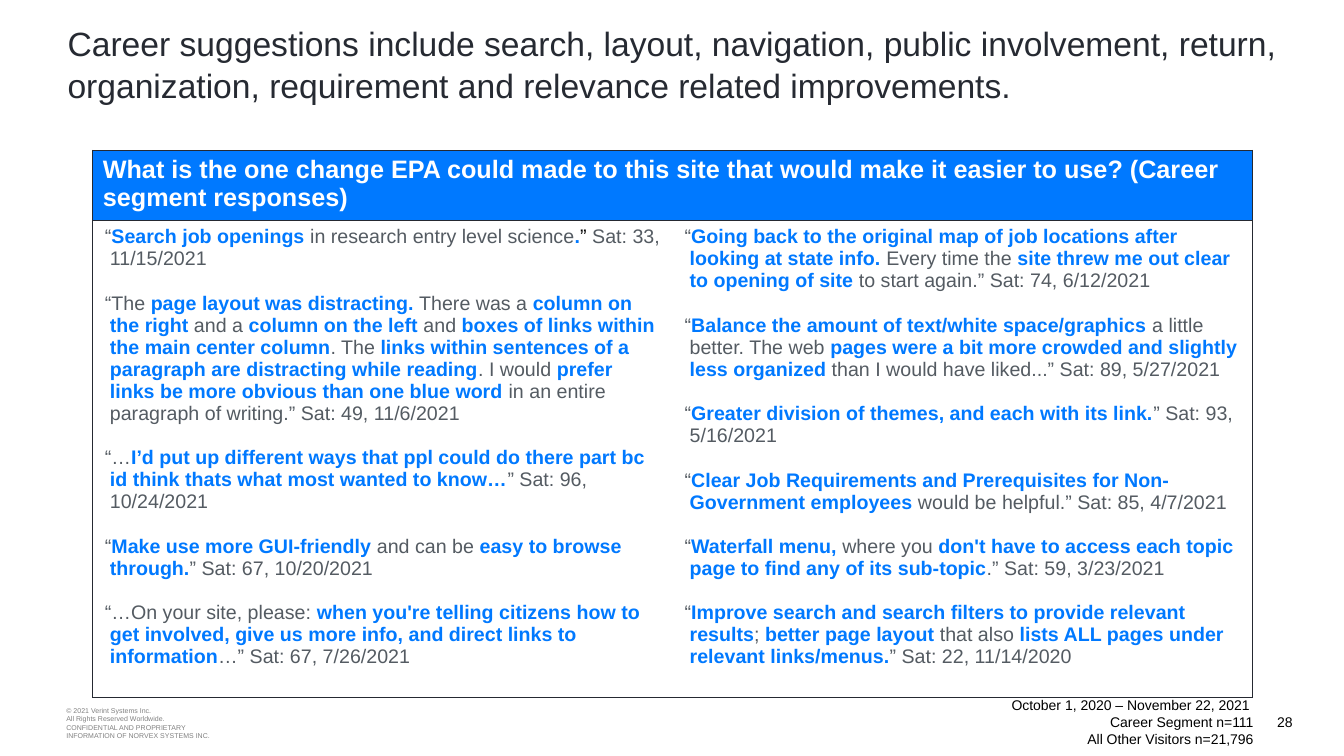
from dataclasses import dataclass

from lxml import etree
from pptx import Presentation
from pptx.dml.color import RGBColor
from pptx.enum.text import MSO_ANCHOR, PP_ALIGN
from pptx.oxml.ns import qn
from pptx.util import Inches, Pt

LEFT, RIGHT = PP_ALIGN.LEFT, PP_ALIGN.RIGHT
TOP, MIDDLE = MSO_ANCHOR.TOP, MSO_ANCHOR.MIDDLE
FONT = "Arial"
BLUE, GREY, INK, BLACK, WHITE = "0079FF", "545B62", "252931", "000000", "FFFFFF"

TITLE = ("Career suggestions include search, layout, navigation, public involvement, return, "
         "organization, requirement and relevance related improvements.")
QUESTION = ("What is the one change EPA could made to this site that would make it easier to use? "
            "(Career segment responses)")

# Runs are parted by "|"; a leading "*" makes a run bold blue, "^" makes it black
MARKS = {"*": (BLUE, True), "^": (BLACK, False)}
QUOTES = [
    [
        "“|*Search job openings| in research entry level science|*.|^” |Sat: 33, 11/15/2021",
        "“The |*page layout was distracting.| There was a |*column on the right| and a "
        "|*column on the left |and |*boxes of links within the main center column|. The "
        "|*links within sentences of a paragraph are distracting while reading|. I would "
        "|*prefer links be more obvious than one blue word"
        "| in an entire paragraph of writing.” Sat: 49, 11/6/2021",
        "“…|*I’d put up different ways that ppl could do there part bc id think thats what "
        "most wanted to know…|” Sat: 96, 10/24/2021",
        "“|*Make use more GUI-friendly| and can be |*easy to browse through."
        "|” Sat: 67, 10/20/2021",
        "“…On your site, please: |*when you're telling citizens how to get involved, give us "
        "more info, and direct links to information|…” Sat: 67, 7/26/2021",
    ],
    [
        "“|*Going back to the original map of job locations after looking at state info."
        "| Every time the |*site threw me out clear to opening of site"
        "| to start again.” Sat: 74, 6/12/2021",
        "“|*Balance the amount of text/white space/graphics| a little better. The web "
        "|*pages were a bit more crowded and slightly less organized"
        "| than I would have liked...” Sat: 89, 5/27/2021",
        "“|*Greater division of themes, and each with its link.|” Sat: 93, 5/16/2021",
        "“|*Clear Job Requirements and Prerequisites for Non-Government employees"
        "| would be helpful.” Sat: 85, 4/7/2021",
        "“|*Waterfall menu, |where you |*don't have to access each topic page to find any "
        "of its sub-topic|.” Sat: 59, 3/23/2021",
        "“|*Improve search and search filters to provide relevant results|; "
        "|*better page layout| that also |*lists ALL pages under relevant links/menus."
        "|” Sat: 22, 11/14/2020",
    ],
]


@dataclass
class Note:
    left: float
    top: float
    width: float
    lines: list[str]
    size: float
    color: str
    align: PP_ALIGN


NOTES = [
    Note(0.56, 6.94, 2.4, ["© 2021 Verint Systems Inc.", "All Rights Reserved Worldwide.",
                           "CONFIDENTIAL AND PROPRIETARY",
                           "INFORMATION OF NORVEX SYSTEMS INC."], 5, "808080", LEFT),
    Note(11.81, 6.93, 1.11, ["28"], 10, BLACK, RIGHT),
    Note(6.53, 6.93, 6, ["October 1, 2020 – November 22, 2021 ", "Career Segment n=111",
                         "All Other Visitors n=21,796"], 10, BLACK, RIGHT),
]


def rgb(color: str) -> RGBColor:
    return RGBColor.from_string(color)


def add_run(p, text: str, size: float, color: str, bold: bool = False) -> None:
    r = p.add_run()
    r.text = text
    r.font.name, r.font.size, r.font.bold = FONT, Pt(size), bold
    r.font.color.rgb = rgb(color)


def next_paragraph(tf, index: int):
    return tf.add_paragraph() if index else tf.paragraphs[0]


def add_note(slide, note: Note) -> None:
    box = slide.shapes.add_textbox(Inches(note.left), Inches(note.top),
                                   Inches(note.width), Inches(0.47))
    tf = box.text_frame
    tf.word_wrap, tf.vertical_anchor = True, MIDDLE
    for i, line in enumerate(note.lines):
        p = next_paragraph(tf, i)
        p.alignment = note.align
        add_run(p, line, note.size, note.color)


def set_borders(cell, sides: str) -> None:
    """Line the given sides of a cell, and clear the others."""
    tc_pr = cell._tc.get_or_add_tcPr()
    for side in "LRTB":
        ln = etree.SubElement(tc_pr, qn(f"a:ln{side}"), w=str(Pt(0.75)))
        if side in sides:
            fill = etree.SubElement(ln, qn("a:solidFill"))
            etree.SubElement(fill, qn("a:srgbClr"), val=INK)
        else:
            etree.SubElement(ln, qn("a:noFill"))


def add_quotes(cell, quotes: list[str]) -> None:
    for i, quote in enumerate(quotes):
        p = next_paragraph(cell.text_frame, i)
        p_pr = p._p.get_or_add_pPr()
        p_pr.set("marL", str(Inches(0.07)))
        p_pr.set("indent", str(Inches(-0.05)))
        if i:
            p.space_before = Pt(16)
        for part in quote.split("|"):
            color, bold = MARKS.get(part[0], (GREY, False))
            add_run(p, part.lstrip("*^"), 14, color, bold)


def add_quote_table(slide) -> None:
    frame = slide.shapes.add_table(2, 2, Inches(0.92), Inches(1.49), Inches(11.5), Inches(5.39))
    table = frame.table
    table.first_row = table.horz_banding = False
    for row, height in zip(table.rows, (0.69, 4.7)):
        row.height = Inches(height)

    # Question across both columns
    header = table.cell(0, 0)
    header.merge(table.cell(0, 1))
    for cell in table.rows[0].cells:
        set_borders(cell, "LRTB")
        cell.fill.solid()
        cell.fill.fore_color.rgb = rgb(BLUE)
    add_run(header.text_frame.paragraphs[0], QUESTION, 18, WHITE, True)

    # Visitor answers
    for cell, sides, quotes in zip(table.rows[1].cells, ("LTB", "RTB"), QUOTES):
        set_borders(cell, sides)
        cell.fill.background()
        add_quotes(cell, quotes)


def main() -> None:
    prs = Presentation()
    prs.slide_width, prs.slide_height = Inches(13.33), Inches(7.5)
    slide = prs.slides.add_slide(prs.slide_layouts[5])

    # Title
    title = slide.shapes.title
    title.left, title.top = Inches(0.57), Inches(0.16)
    title.width, title.height = Inches(12.2), Inches(0.77)
    tf = title.text_frame
    tf.word_wrap, tf.vertical_anchor = True, TOP
    p = tf.paragraphs[0]
    p.alignment, p.line_spacing = LEFT, 1.04
    add_run(p, TITLE, 24, "262A32")

    # Footer notes and table
    for note in NOTES:
        add_note(slide, note)
    add_quote_table(slide)
    prs.save("out.pptx")


if __name__ == "__main__":
    main()
